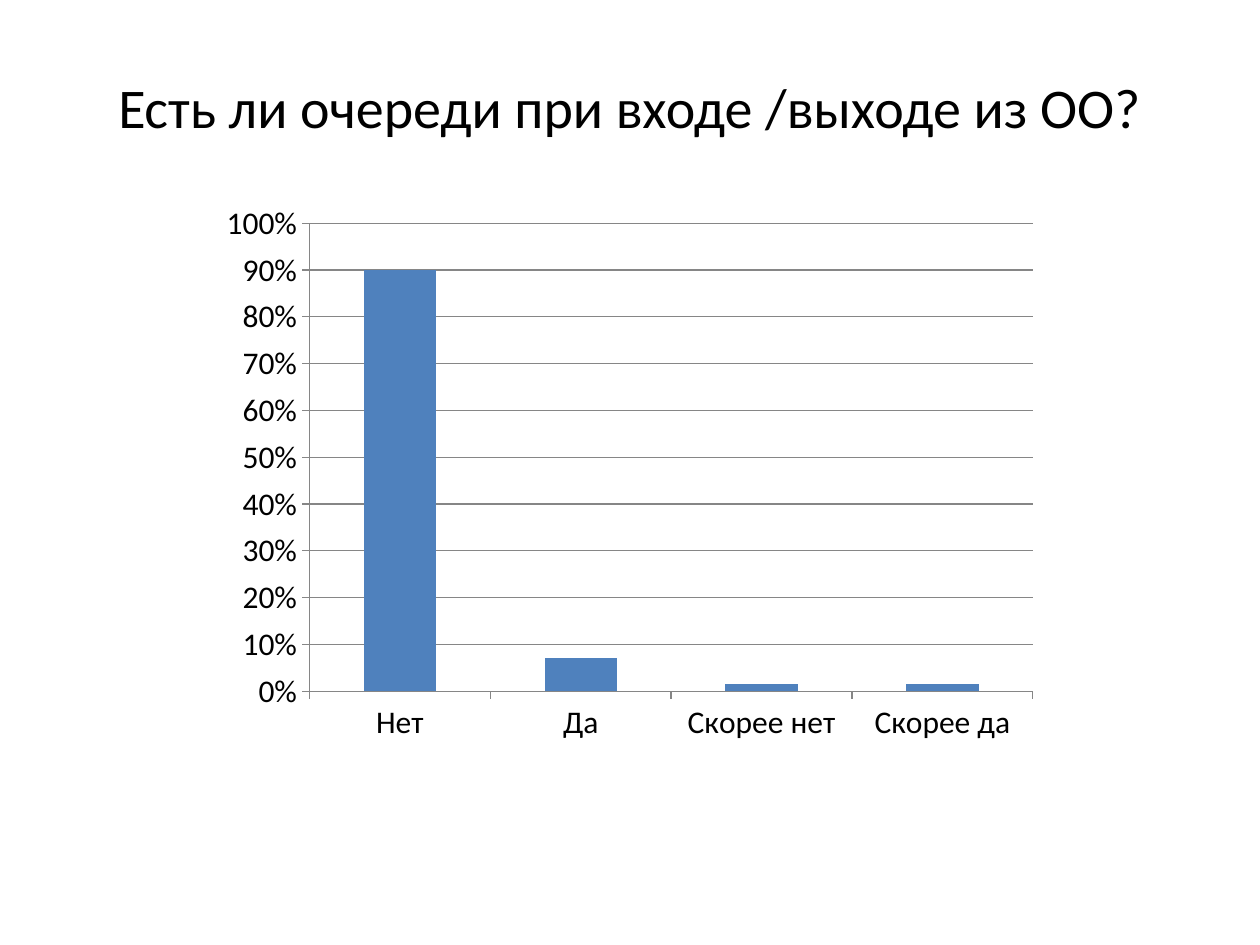
from pptx import Presentation
from pptx.chart.data import CategoryChartData as ChartData
from pptx.dml.color import RGBColor
from pptx.enum.chart import XL_CHART_TYPE as ChartType, XL_TICK_MARK as Tick
from pptx.enum.text import MSO_ANCHOR as Anchor, PP_ALIGN as Align
from pptx.util import Cm, Pt

BLACK = RGBColor(0x00, 0x00, 0x00)
BLUE = RGBColor(0x4F, 0x81, 0xBD)
GRAY = RGBColor(0x86, 0x86, 0x86)
FACE = "Calibri"

TITLE = "Есть ли очереди при входе /выходе из ОО?"
SHARES = {"Нет": 0.9, "Да": 0.07, "Скорее нет": 0.015, "Скорее да": 0.015}


def set_all(item, form):
    for name, value in form.items():
        setattr(item, name, value)


def set_font(font, size):
    set_all(font, {"name": FACE, "size": Pt(size), "bold": False})
    font.color.rgb = BLACK


def set_line(line):
    set_all(line, {"width": Pt(0.75)})
    line.color.rgb = GRAY


def add_title(slide, text):
    box = slide.shapes.add_textbox(Cm(1.9), Cm(0.53), Cm(21.6), Cm(3.2))
    frame = box.text_frame
    set_all(frame, {"word_wrap": True, "vertical_anchor": Anchor.MIDDLE})
    para = frame.paragraphs[0]
    set_all(para, {"text": text, "alignment": Align.CENTER})
    set_font(para.runs[0].font, 32)


def add_bars(slide, shares):
    data = ChartData(number_format="0%")
    data.categories = list(shares)
    data.add_series("Series 1", list(shares.values()))
    chart = slide.shapes.add_chart(
        ChartType.COLUMN_CLUSTERED, Cm(4.23), Cm(3.89), Cm(16.93), Cm(11.29), data
    ).chart
    set_all(chart, {"has_legend": False, "has_title": False})
    set_font(chart.font, 18)

    plot = chart.plots[0]
    set_all(plot, {"gap_width": 150, "vary_by_categories": False})
    fill = plot.series[0].format.fill
    fill.solid()
    fill.fore_color.rgb = BLUE

    base, scale = chart.category_axis, chart.value_axis
    for axis in (base, scale):
        set_all(axis, {"major_tick_mark": Tick.OUTSIDE, "minor_tick_mark": Tick.NONE})
        set_line(axis.format.line)
    base.has_major_gridlines = False
    set_all(scale, {"minimum_scale": 0, "maximum_scale": 1, "major_unit": 0.1,
                    "has_major_gridlines": True})
    set_all(scale.tick_labels, {"number_format": "0%", "number_format_is_linked": False})
    set_line(scale.major_gridlines.format.line)


def main():
    deck = Presentation()
    set_all(deck, {"slide_width": Cm(25.4), "slide_height": Cm(19.05)})
    slide = deck.slides.add_slide(deck.slide_layouts[6])
    add_title(slide, TITLE)
    add_bars(slide, SHARES)
    deck.save("out.pptx")


if __name__ == "__main__":
    main()
